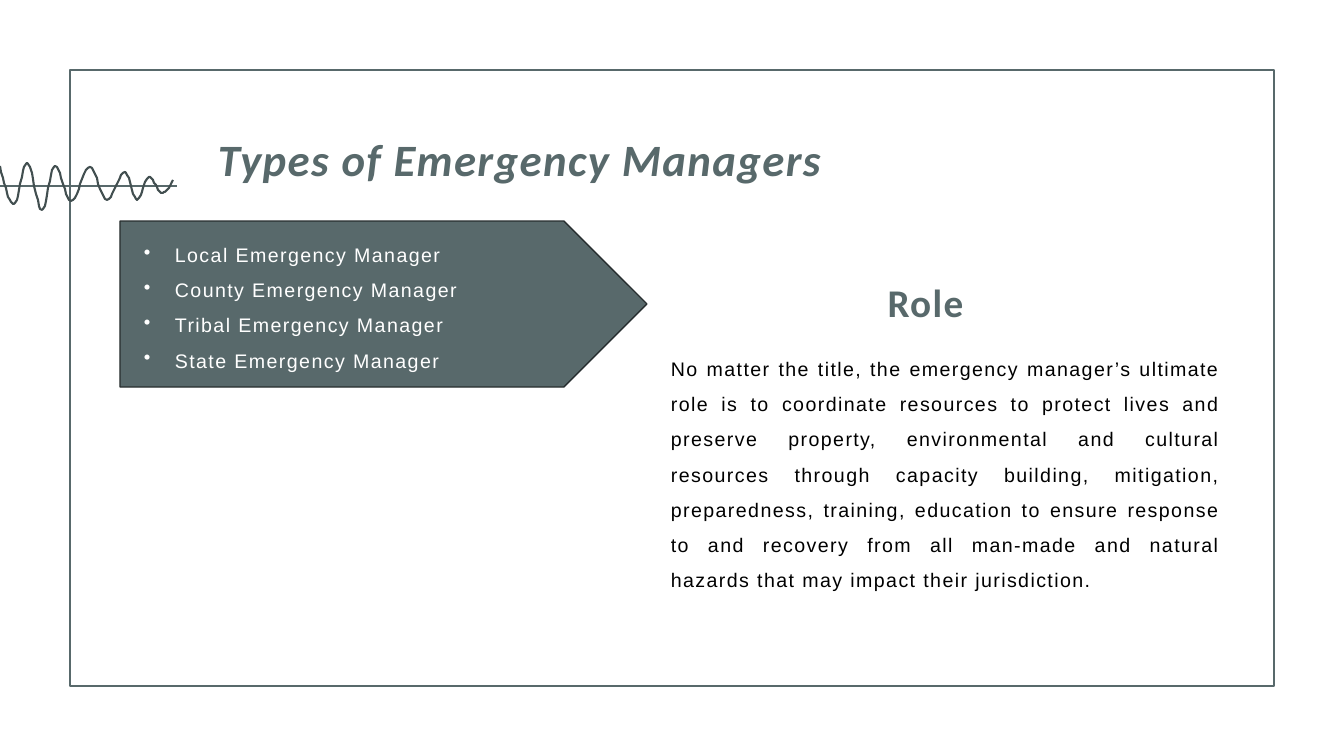
from itertools import pairwise
from math import cos, pi, sin

from lxml.etree import SubElement
from pptx import Presentation
from pptx.dml.color import RGBColor
from pptx.enum.shapes import MSO_CONNECTOR, MSO_SHAPE
from pptx.enum.text import MSO_ANCHOR, PP_ALIGN
from pptx.oxml.ns import qn
from pptx.util import Emu, Pt

PX = 914400 / 100.8
SLATE, DARK_SLATE, OUTLINE = "58696B", "424F50", "272E2F"
WHITE, BLACK = "FFFFFF", "000000"

MANAGERS = [f"{level} Emergency Manager" for level in ("Local", "County", "Tribal", "State")]
ROLE = (
    "No matter the title, the emergency manager’s ultimate role is to coordinate "
    "resources to protect lives and preserve property, environmental and cultural "
    "resources through capacity building, mitigation, preparedness, training, "
    "education to ensure response to and recovery from all man-made and natural "
    "hazards that may impact their jurisdiction."
)
WAVE_TURNS = [(0, 166), (14, 204), (27, 163), (42, 210), (55, 166), (71, 201), (90, 167),
              (107, 200), (125, 172), (137, 200), (149, 177), (162, 193), (173, 180)]


def px(n):
    return Emu(round(n * PX))


def rgb(color):
    return RGBColor.from_string(color)


def wave_points(turns, steps=10):
    """Join the turning points with sine arcs; the two ends stay sloped."""
    points = [turns[0]]
    for (x0, y0), (x1, y1) in pairwise(turns):
        for i in range(1, steps + 1):
            t = i / steps
            if (x0, y0) == turns[0]:
                rise = sin(t * pi / 2)
            elif (x1, y1) == turns[-1]:
                rise = 1 - cos(t * pi / 2)
            else:
                rise = (1 - cos(t * pi)) / 2
            points.append((x0 + (x1 - x0) * t, y0 + (y1 - y0) * rise))
    return points


class SlideBuilder:
    def __init__(self, slide):
        self.s = slide

    def outline(self, sp, color, width):
        sp.line.color.rgb = rgb(color)
        sp.line.width = Pt(width)

    def shape(self, kind, x, y, w, h, line, width, fill=None):
        sp = self.s.shapes.add_shape(kind, px(x), px(y), px(w), px(h))
        sp.shadow.inherit = False
        if fill:
            sp.fill.solid()
            sp.fill.fore_color.rgb = rgb(fill)
        else:
            sp.fill.background()
        self.outline(sp, line, width)

    def line(self, x0, y0, x1, y1, color, width):
        cx = self.s.shapes.add_connector(MSO_CONNECTOR.STRAIGHT, px(x0), px(y0), px(x1), px(y1))
        SubElement(cx._element.spPr, qn("a:effectLst"))
        self.outline(cx, color, width)

    def curve(self, points, color, width):
        fb = self.s.shapes.build_freeform(*points[0], scale=PX)
        fb.add_line_segments(points[1:], close=False)
        sp = fb.convert_to_shape()
        sp.shadow.inherit = False
        sp.fill.background()
        self.outline(sp, color, width)

    def text(self, x, y, w, h, lines, size, color, font="Arial", bold=False, italic=False,
             align=PP_ALIGN.LEFT, anchor=MSO_ANCHOR.TOP, spacing=1.5, bullets=False):
        tf = self.s.shapes.add_textbox(px(x), px(y), px(w), px(h)).text_frame
        tf.word_wrap = True
        tf.vertical_anchor = anchor
        tf.text = "\n".join(lines)
        for p in tf.paragraphs:
            p.alignment = align
            p.line_spacing = spacing
            p.font.name, p.font.size = font, Pt(size)
            p.font.bold, p.font.italic = bold, italic
            p.font.color.rgb = rgb(color)
            pPr = p._p.get_or_add_pPr()
            pPr.find(qn("a:defRPr")).set("spc", "100")
            if bullets:
                indent = px(31)
                pPr.set("marL", str(indent))
                pPr.set("indent", str(-indent))
                bullet = pPr.makeelement(qn("a:buChar"), {"char": "•"})
                pPr.find(qn("a:defRPr")).addprevious(bullet)

    def heading(self, x, y, w, h, line, size, **style):
        self.text(x, y, w, h, [line], size, SLATE, font="Calibri", bold=True,
                  anchor=MSO_ANCHOR.MIDDLE, spacing=0.9, **style)


def main():
    prs = Presentation()
    prs.slide_width, prs.slide_height = px(1344), px(756)
    b = SlideBuilder(prs.slides.add_slide(prs.slide_layouts[6]))

    b.line(0, 186, 177, 186, SLATE, 1.5)
    b.shape(MSO_SHAPE.PENTAGON, 120, 221, 527, 166, OUTLINE, 1, fill=SLATE)
    b.heading(208, 100, 717, 123, "Types of Emergency Managers", 32, italic=True)
    b.text(134, 226, 584, 151, MANAGERS, 14, WHITE, bullets=True)
    b.shape(MSO_SHAPE.RECTANGLE, 70, 70, 1204, 616, SLATE, 1.5)
    b.heading(765, 268, 321, 73, "Role", 28, align=PP_ALIGN.CENTER)
    b.text(661, 340, 569, 290, [ROLE], 14, BLACK, align=PP_ALIGN.JUSTIFY)
    b.curve(wave_points(WAVE_TURNS), DARK_SLATE, 1.5)

    prs.save("out.pptx")


if __name__ == "__main__":
    main()
